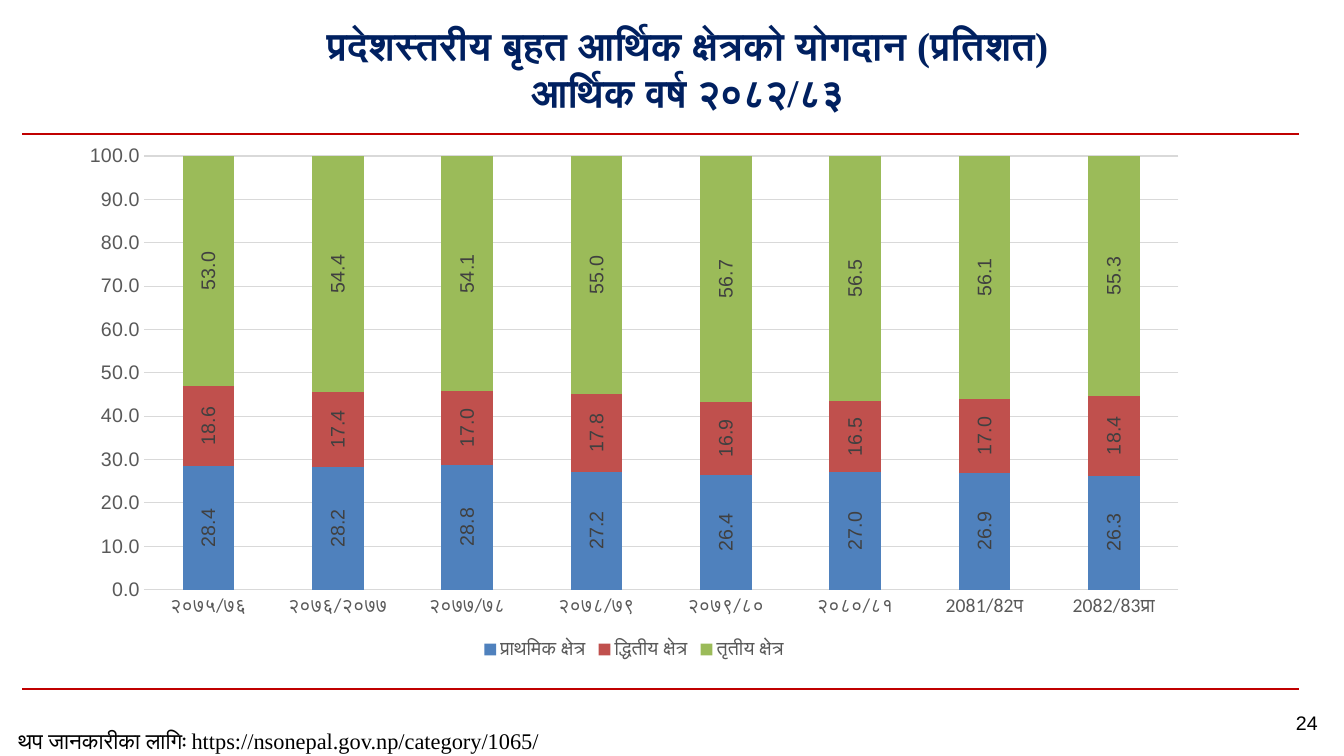
from pptx import Presentation
from pptx.chart.data import CategoryChartData
from pptx.dml.color import RGBColor
from pptx.enum.chart import XL_CHART_TYPE, XL_LABEL_POSITION, XL_LEGEND_POSITION, XL_TICK_MARK
from pptx.enum.shapes import MSO_CONNECTOR
from pptx.enum.text import MSO_ANCHOR, PP_ALIGN
from pptx.oxml.ns import qn
from pptx.util import Pt

NAVY = RGBColor(0x00, 0x20, 0x60)
BLACK = RGBColor(0x00, 0x00, 0x00)
RULE_RED = RGBColor(0xC0, 0x00, 0x00)
GRID_GREY = RGBColor(0xD9, 0xD9, 0xD9)
AXIS_GREY = RGBColor(0x59, 0x59, 0x59)
LABEL_GREY = RGBColor(0x40, 0x40, 0x40)
BLUE = RGBColor(0x4F, 0x81, 0xBD)
RED = RGBColor(0xC0, 0x50, 0x4D)
GREEN = RGBColor(0x9B, 0xBB, 0x59)

YEARS = ["२०७५/७६", "२०७६/२०७७", "२०७७/७८", "२०७८/७९",
         "२०७९/८०", "२०८०/८१", "2081/82प", "2082/83प्रा"]
SECTORS = [
    ("प्राथमिक क्षेत्र", BLUE, [28.4, 28.2, 28.8, 27.2, 26.4, 27.0, 26.9, 26.3]),
    ("द्धितीय क्षेत्र", RED, [18.6, 17.4, 17.0, 17.8, 16.9, 16.5, 17.0, 18.4]),
    ("तृतीय क्षेत्र", GREEN, [53.0, 54.4, 54.1, 55.0, 56.7, 56.5, 56.1, 55.3]),
]


def style_font(font, name, size, color, bold=False):
    font.name = name
    font.size = Pt(size)
    font.bold = bold
    font.color.rgb = color


def add_text(slide, text, box, name, size, color, bold=False,
             align=PP_ALIGN.LEFT, anchor=MSO_ANCHOR.TOP):
    shape = slide.shapes.add_textbox(*map(Pt, box))
    frame = shape.text_frame
    frame.word_wrap = True
    frame.vertical_anchor = anchor
    frame.text = text
    paragraph = frame.paragraphs[0]
    paragraph.alignment = align
    style_font(paragraph.font, name, size, color, bold)


def add_rule(slide, top):
    rule = slide.shapes.add_connector(
        MSO_CONNECTOR.STRAIGHT, Pt(16), Pt(top), Pt(928), Pt(top))
    rule.line.color.rgb = RULE_RED
    rule.line.width = Pt(1.5)
    properties = rule._element.spPr
    properties.append(properties.makeelement(qn("a:effectLst"), {}))


def style_axes(chart):
    category_axis, value_axis = chart.category_axis, chart.value_axis
    for axis, font_name in ((category_axis, "Calibri"), (value_axis, "Arial")):
        axis.major_tick_mark = XL_TICK_MARK.NONE
        axis.minor_tick_mark = XL_TICK_MARK.NONE
        style_font(axis.tick_labels.font, font_name, 14, AXIS_GREY)
    category_axis.format.line.color.rgb = GRID_GREY
    category_axis.format.line.width = Pt(0.75)
    value_axis.format.line.fill.background()
    value_axis.minimum_scale = 0
    value_axis.maximum_scale = 100
    value_axis.major_unit = 10
    value_axis.tick_labels.number_format = "0.0"
    value_axis.tick_labels.number_format_is_linked = False
    gridlines = value_axis.major_gridlines.format.line
    gridlines.color.rgb = GRID_GREY
    gridlines.width = Pt(0.75)


def style_series(series, color):
    series.format.fill.solid()
    series.format.fill.fore_color.rgb = color
    labels = series.data_labels
    labels.show_value = True
    labels.position = XL_LABEL_POSITION.CENTER
    labels.number_format = "0.0"
    labels.number_format_is_linked = False
    style_font(labels.font, "Arial", 14, LABEL_GREY)
    # Turn the labels to read upwards
    body = labels._element.find(qn("c:txPr")).find(qn("a:bodyPr"))
    body.set("rot", "-5400000")
    body.set("vert", "horz")


def add_sector_chart(slide, box):
    data = CategoryChartData(number_format="0.0")
    data.categories = YEARS
    for name, _, values in SECTORS:
        data.add_series(name, values)
    chart = slide.shapes.add_chart(
        XL_CHART_TYPE.COLUMN_STACKED, *map(Pt, box), data).chart
    chart.has_title = False
    style_font(chart.font, "Calibri", 14, BLACK)
    chart.has_legend = True
    chart.legend.position = XL_LEGEND_POSITION.BOTTOM
    chart.legend.include_in_layout = False
    style_font(chart.legend.font, "Calibri", 14, AXIS_GREY)
    style_axes(chart)
    plot = chart.plots[0]
    plot.gap_width = 150
    plot.overlap = 100
    plot.vary_by_categories = False
    for series, (_, color, _) in zip(plot.series, SECTORS):
        style_series(series, color)


def main():
    presentation = Presentation()
    presentation.slide_width = Pt(960)
    presentation.slide_height = Pt(540)
    slide = presentation.slides.add_slide(presentation.slide_layouts[6])

    # Rules above and below the chart
    for top in (96, 492):
        add_rule(slide, top)

    # Title
    add_text(slide, "प्रदेशस्तरीय बृहत आर्थिक क्षेत्रको योगदान (प्रतिशत)\vआर्थिक वर्ष २०८२/८३",
             (186, 18, 610, 61), "Times New Roman", 28, NAVY, bold=True,
             align=PP_ALIGN.CENTER, anchor=MSO_ANCHOR.MIDDLE)

    # Chart
    add_sector_chart(slide, (48, 96, 810, 378))

    # Page number and source
    add_text(slide, "24", (912, 504, 43, 24), "Arial", 14, BLACK, align=PP_ALIGN.CENTER)
    add_text(slide, "थप जानकारीका लागिः https://nsonepal.gov.np/category/1065/",
             (6, 516, 444, 24), "Times New Roman", 16, BLACK)

    presentation.save("out.pptx")


if __name__ == "__main__":
    main()
